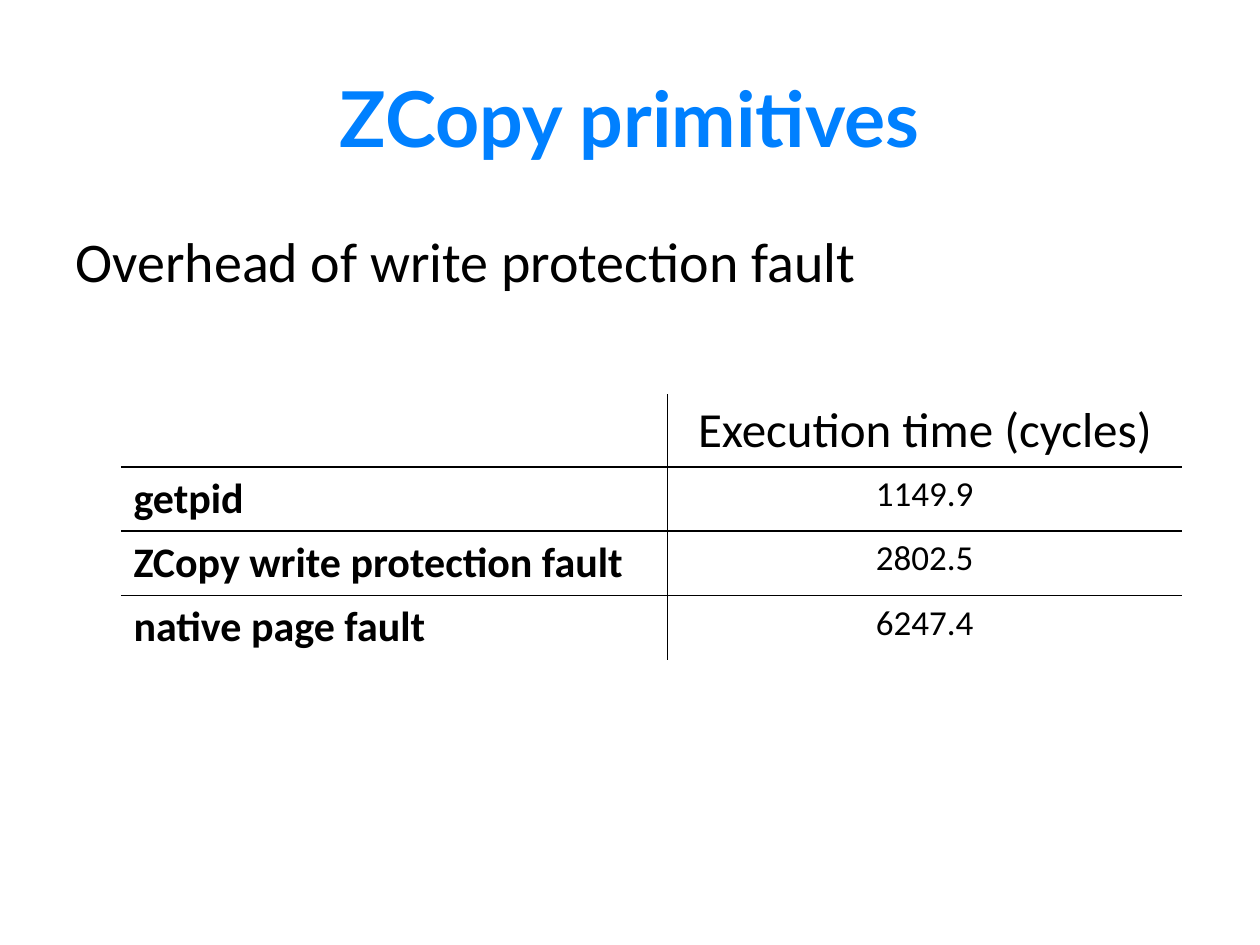
from typing import NamedTuple

from lxml.etree import SubElement
from pptx import Presentation
from pptx.dml.color import RGBColor
from pptx.enum.text import MSO_ANCHOR, PP_ALIGN as Align
from pptx.oxml import parse_xml
from pptx.oxml.ns import nsdecls, qn
from pptx.util import Inches, Pt

COLORS = {"title": "0080FF", "text": "000000", "rule": "000000"}


class Style(NamedTuple):
    size: int
    font: str = "Calibri"
    bold: bool = False
    color: str = "text"
    align: Align = Align.LEFT


TITLE = Style(44, "Lato", True, "title", Align.CENTER)
BODY = Style(32)
HEADER = Style(28, align=Align.CENTER)
LABEL = Style(24, bold=True)
VALUE = Style(20, align=Align.CENTER)

ROWS = [
    ("", "Execution time (cycles)"),
    ("getpid", "1149.9"),
    ("ZCopy write protection fault", "2802.5"),
    ("native page fault", "6247.4"),
]
COL_WIDTHS = (4.34, 4.08)
ROW_HEIGHTS = (0.57, 0.51, 0.51, 0.51)


def write(tf, text: str, style: Style) -> None:
    tf.text = text
    p = tf.paragraphs[0]
    p.alignment = style.align
    p.font.size = Pt(style.size)
    p.font.name = style.font
    p.font.bold = style.bold
    p.font.color.rgb = RGBColor.from_string(COLORS[style.color])


def place(sp, left: float, top: float, width: float, height: float) -> None:
    sp.left, sp.top = Inches(left), Inches(top)
    sp.width, sp.height = Inches(width), Inches(height)


def set_borders(cell, ruled: dict[str, bool]) -> None:
    """Draw a 1 pt line on each ruled side (L, R, T, B) and none on the others."""
    tc_pr = cell._tc.get_or_add_tcPr()
    for i, (side, on) in enumerate(ruled.items()):
        paint = (f'<a:solidFill><a:srgbClr val="{COLORS["rule"]}"/></a:solidFill>'
                 if on else "<a:noFill/>")
        tc_pr.insert(i, parse_xml(
            f'<a:ln{side} {nsdecls("a")} w="{Pt(1)}">{paint}</a:ln{side}>'))


def add_timing_table(s, left: float, top: float) -> None:
    n_rows, n_cols = len(ROWS), len(COL_WIDTHS)
    table = s.shapes.add_table(
        n_rows, n_cols, Inches(left), Inches(top),
        Inches(sum(COL_WIDTHS)), Inches(sum(ROW_HEIGHTS))).table
    table.first_row = table.horz_banding = False
    for col, width in zip(table.columns, COL_WIDTHS):
        col.width = Inches(width)
    for r, (row, height) in enumerate(zip(table.rows, ROW_HEIGHTS)):
        row.height = Inches(height)
        for c, cell in enumerate(row.cells):
            style = HEADER if r == 0 else (LABEL, VALUE)[c]
            write(cell.text_frame, ROWS[r][c], style)
            cell.fill.background()
            # Only the lines between cells are ruled
            set_borders(cell, {"L": c > 0, "R": c < n_cols - 1,
                               "T": r > 0, "B": r < n_rows - 1})


def main() -> None:
    prs = Presentation()
    prs.slide_width, prs.slide_height = Inches(10), Inches(7.5)
    s = prs.slides.add_slide(prs.slide_layouts[1])

    title, body = s.placeholders
    place(title, 0.5, 0.3, 9, 1.25)
    write(title.text_frame, "ZCopy primitives", TITLE)
    title.text_frame.vertical_anchor = MSO_ANCHOR.MIDDLE

    place(body, 0.5, 1.75, 9, 4.95)
    write(body.text_frame, "Overhead of write protection fault", BODY)
    p_pr = body.text_frame.paragraphs[0]._p.get_or_add_pPr()
    p_pr.set("marL", "0")
    p_pr.set("indent", "0")
    bullet = SubElement(p_pr, qn("a:buNone"))
    p_pr.insert(0, bullet)

    add_timing_table(s, 0.96, 3.13)
    prs.save("out.pptx")


if __name__ == "__main__":
    main()
